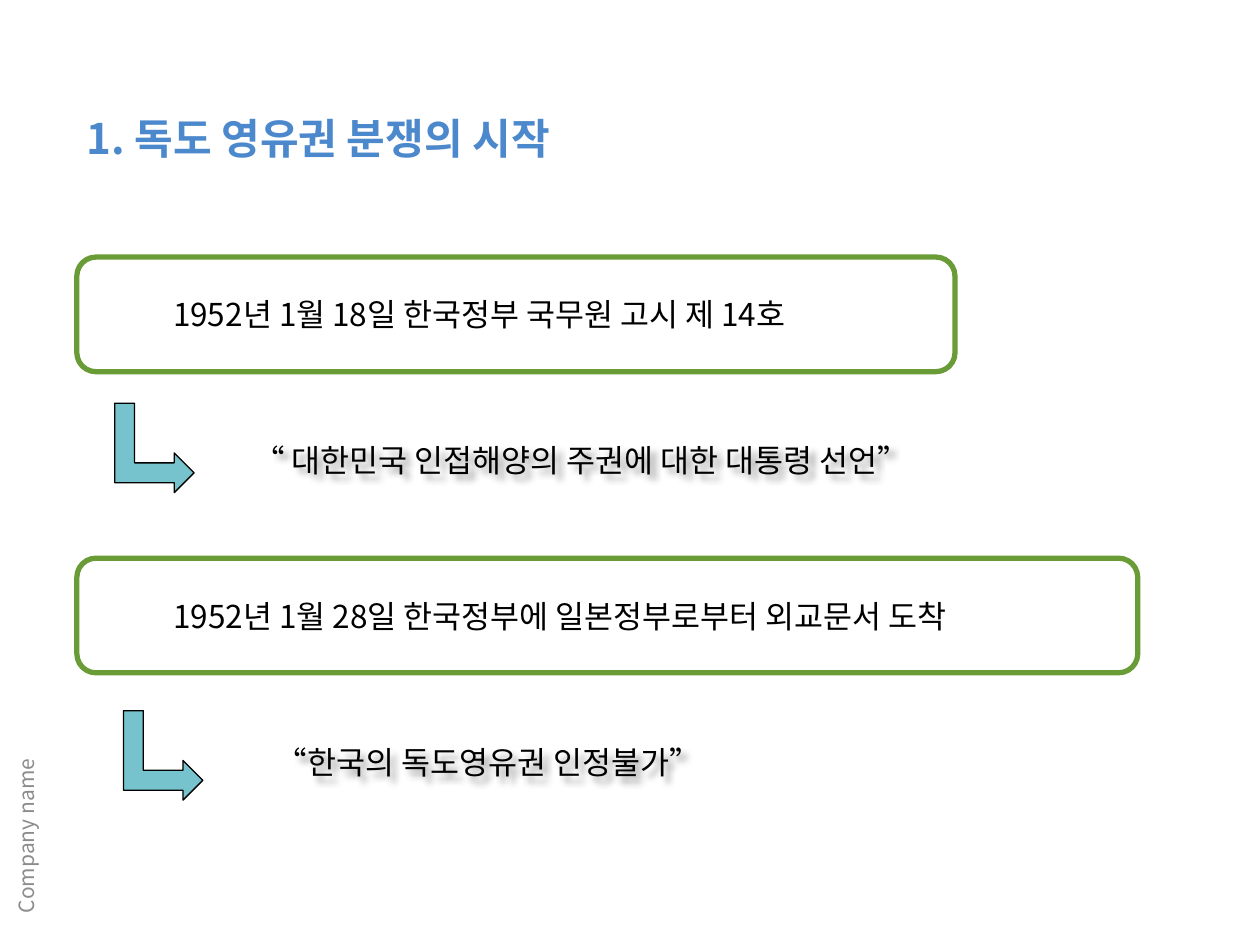
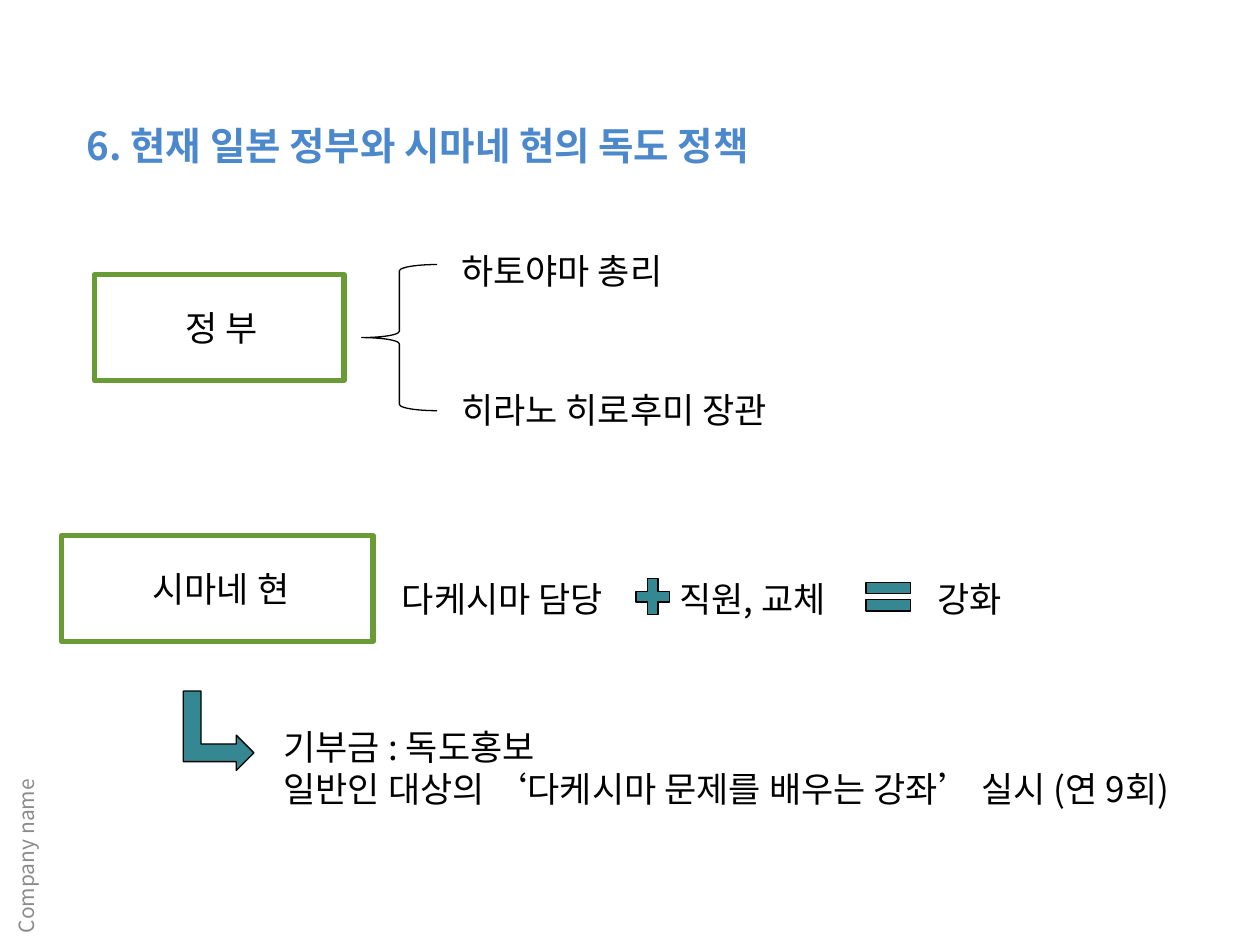
import dataclasses

import lxml.etree
import pptx
import pptx.dml.color
import pptx.enum.shapes
import pptx.enum.text
import pptx.oxml.ns
import pptx.util

Inches = pptx.util.Inches
Pt = pptx.util.Pt
qn = pptx.oxml.ns.qn
SHAPE = pptx.enum.shapes.MSO_SHAPE
MIDDLE = pptx.enum.text.MSO_ANCHOR.MIDDLE


@dataclasses.dataclass(frozen=True)
class Theme:
    """Colours, type sizes and line widths shared by the slides."""
    font: str = "Noto Sans CJK KR"
    title: str = "4C88CC"
    ink: str = "000000"
    footer: str = "8C8C8C"
    frame: str = "699B37"
    light_teal: str = "76C3CD"
    dark_teal: str = "358791"
    footer_size: float = 12
    statement_size: float = 18
    policy_size: float = 20
    frame_width: float = 3
    thin_width: float = 0.75


THEME = Theme()
TIGHT = (0.08, 0.04, 0.08, 0.04)
INDENTED = (0.72, 0.04, 0.08, 0.04)
NORMAL = (0.1, 0.05, 0.1, 0.05)


def rgb(value):
    """Return a colour from its hex digits."""
    return pptx.dml.color.RGBColor.from_string(value)


def write(sp, text, size, color=THEME.ink, bold=False, insets=TIGHT, anchor=None):
    """Fill a shape with left-aligned text in the theme font."""
    tf = sp.text_frame
    tf.word_wrap = True
    tf.margin_left, tf.margin_top, tf.margin_right, tf.margin_bottom = map(Inches, insets)
    if anchor is not None:
        tf.vertical_anchor = anchor
    tf.text = text
    for p in tf.paragraphs:
        p.alignment = pptx.enum.text.PP_ALIGN.LEFT
        for r in p.runs:
            r.font.name = THEME.font
            r.font.size = Pt(size)
            r.font.bold = bold
            r.font.color.rgb = rgb(color)
            ea = lxml.etree.SubElement(r.font._element, qn("a:ea"))
            ea.set("typeface", THEME.font)


def add_text(s, box, text, size, **style):
    """Add a wrapping text box."""
    sp = s.shapes.add_textbox(*map(Inches, box))
    write(sp, text, size, **style)
    return sp


def add_outline(s, kind, box, line=THEME.ink, width=THEME.thin_width, fill=None):
    """Add a preset shape without shadow, filled only when a fill is given."""
    sp = s.shapes.add_shape(kind, *map(Inches, box))
    sp.shadow.inherit = False
    if fill:
        sp.fill.solid()
        sp.fill.fore_color.rgb = rgb(fill)
    else:
        sp.fill.background()
    sp.line.color.rgb = rgb(line)
    sp.line.width = Pt(width)
    return sp


def add_frame(s, kind, box, text, size):
    """Add a green frame with an indented caption."""
    sp = add_outline(s, kind, box, THEME.frame, THEME.frame_width)
    write(sp, text, size, insets=INDENTED, anchor=MIDDLE)


def add_turn_arrow(s, box, fill):
    """Add an arrow that goes down and turns right."""
    sp = add_outline(s, SHAPE.BENT_UP_ARROW, box, fill=fill)
    sp.rotation = 90
    return sp


def add_soft_shadow(sp):
    """Give the text of an unfilled box a soft shadow."""
    effects = lxml.etree.SubElement(sp._element.spPr, qn("a:effectLst"))
    shadow = lxml.etree.SubElement(
        effects, qn("a:outerShdw"), blurRad="50800", dist="50800", dir="2700000")
    color = lxml.etree.SubElement(shadow, qn("a:srgbClr"), val=THEME.ink)
    lxml.etree.SubElement(color, qn("a:alpha"), val="40000")


def add_base(prs, title, title_box, title_size, footer_top):
    """Add a slide with its title and upright footer."""
    s = prs.slides.add_slide(prs.slide_layouts[6])
    footer = add_text(s, (-1.38, footer_top, 3.17, 0.34), "Company name", THEME.footer_size,
                      color=THEME.footer, insets=NORMAL, anchor=MIDDLE)
    footer.rotation = 270
    add_text(s, title_box, title, title_size, color=THEME.title, bold=True, insets=NORMAL)
    return s


def add_statement(s, box, event, arrow_offset, quote_offset, quote):
    """Add a framed event with an arrow to the quote that follows from it."""
    x, y = box[:2]
    add_frame(s, SHAPE.ROUNDED_RECTANGLE, box, event, THEME.statement_size)
    dx, dy = arrow_offset
    add_turn_arrow(s, (x + dx, y + dy, 0.71, 0.63), THEME.light_teal)
    dx, dy = quote_offset
    add_soft_shadow(add_text(s, (x + dx, y + dy, 6.67, 0.38), quote, THEME.statement_size))


def add_government(s, box):
    """Add the government frame, braced to its two politicians."""
    x, y, w, h = box
    add_frame(s, SHAPE.RECTANGLE, box, "정 부", THEME.policy_size)
    add_outline(s, SHAPE.LEFT_BRACE, (x + w + 0.14, y - 0.08, 0.6, 1.16))
    for i, person in enumerate(("하토야마 총리", "히라노 히로후미 장관")):
        add_text(s, (x + w + 0.85, y - 0.24 + 1.1 * i, 6.19, 0.42), person, THEME.policy_size)


def add_prefecture(s, box):
    """Add the prefecture frame, its staffing equation and its activities."""
    x, y, w, h = box
    add_frame(s, SHAPE.RECTANGLE, box, "시마네 현", THEME.policy_size)
    row = y + 0.29
    for dx, width, term in ((2.62, 2.16, "다케시마 담당"), (4.82, 1.86, "직원, 교체"),
                            (6.87, 1.74, "강화")):
        add_text(s, (x + dx, row, width, 0.42), term, THEME.policy_size)
    for dx, width, sign in ((4.51, 0.36, SHAPE.MATH_PLUS), (6.32, 0.48, SHAPE.MATH_EQUAL)):
        add_outline(s, sign, (x + dx, row, width, 0.39), fill=THEME.dark_teal)
    add_turn_arrow(s, (x + 0.93, y + 1.27, 0.63, 0.56), THEME.dark_teal)
    add_text(s, (x + 1.68, y + 1.47, 7.48, 0.75),
             "기부금 : 독도홍보\n일반인 대상의 ‘다케시마 문제를 배우는 강좌’ 실시 (연 9회)",
             THEME.policy_size)


def add_dispute_slide(prs):
    """Build the slide on how the dispute began."""
    s = add_base(prs, "1. 독도 영유권 분쟁의 시작", (0.59, 0.84, 8.75, 5.45), 24, 5.59)
    add_statement(s, (0.61, 2.04, 6.97, 0.91), "1952년 1월 18일 한국정부 국무원 고시 제 14호",
                  (0.26, 1.2), (1.32, 1.42), "“ 대한민국 인접해양의 주권에 대한 대통령 선언”")
    add_statement(s, (0.61, 4.43, 8.42, 0.91),
                  "1952년 1월 28일 한국정부에 일본정부로부터 외교문서 도착",
                  (0.33, 1.25), (1.5, 1.43), "“한국의 독도영유권 인정불가”")


def add_policy_slide(prs):
    """Build the slide on current policies."""
    s = add_base(prs, "6. 현재 일본 정부와 시마네 현의 독도 정책", (0.59, 0.92, 8.75, 0.64), 22, 5.75)
    add_government(s, (0.75, 2.18, 1.98, 0.84))
    add_prefecture(s, (0.49, 4.25, 2.47, 0.84))


def main():
    """Build and save the presentation."""
    prs = pptx.Presentation()
    prs.slide_width, prs.slide_height = Inches(10), Inches(7.5)
    add_dispute_slide(prs)
    add_policy_slide(prs)
    prs.save("out.pptx")


if __name__ == "__main__":
    main()
